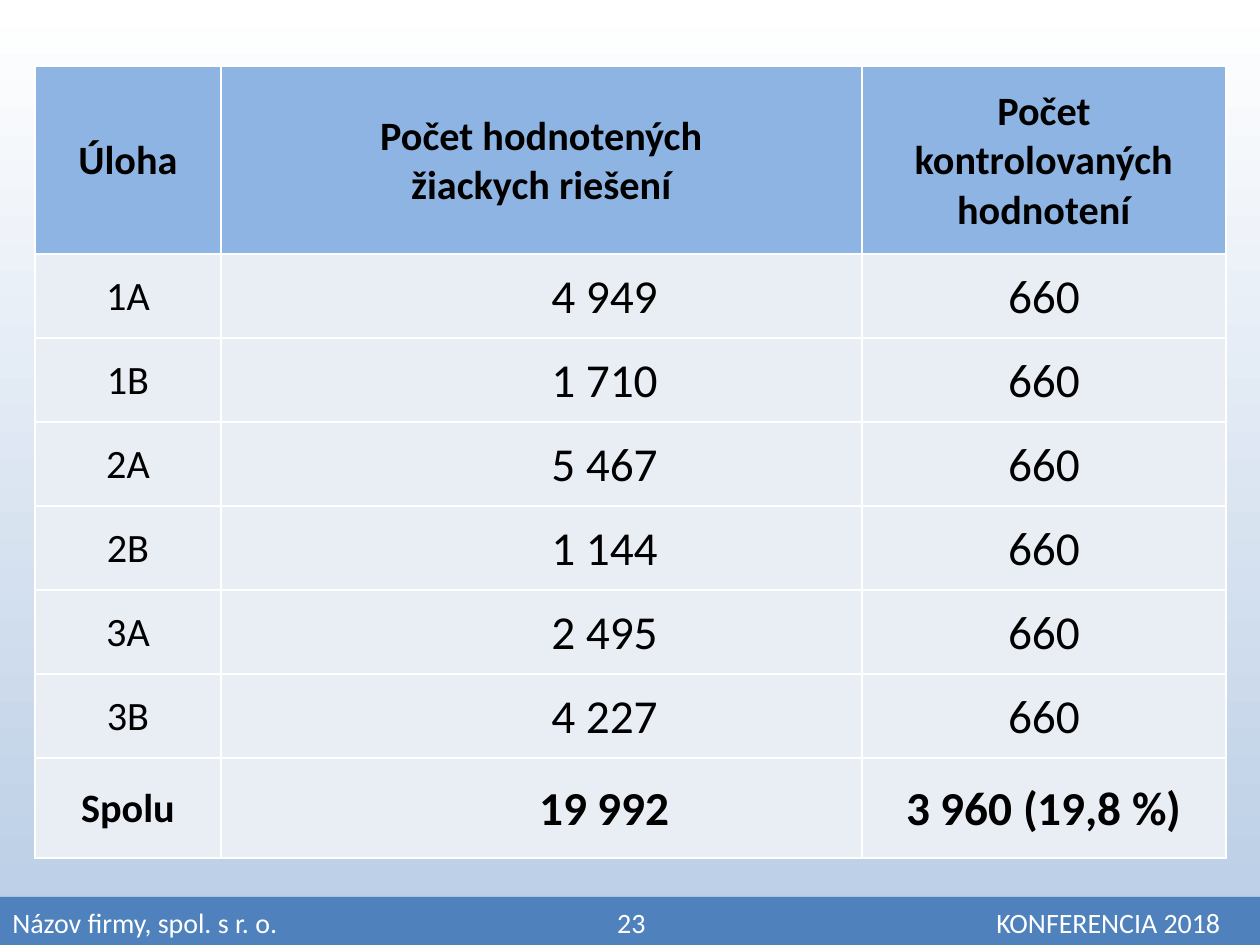
from dataclasses import dataclass

from lxml import etree
from pptx import Presentation
from pptx.dml.color import RGBColor
from pptx.enum.shapes import MSO_SHAPE
from pptx.enum.text import MSO_ANCHOR, PP_ALIGN
from pptx.oxml.ns import qn
from pptx.util import Emu, Pt

RECTANGLE = MSO_SHAPE.RECTANGLE
MIDDLE, BOTTOM = MSO_ANCHOR.MIDDLE, MSO_ANCHOR.BOTTOM
LEFT, CENTER = PP_ALIGN.LEFT, PP_ALIGN.CENTER

WHITE = RGBColor(0xFF, 0xFF, 0xFF)
BLACK = RGBColor(0x00, 0x00, 0x00)
PALE_BLUE = RGBColor(0xB9, 0xCD, 0xE5)
HEADER_BLUE = RGBColor(0x8E, 0xB4, 0xE3)
ROW_GREY = RGBColor(0xE9, 0xED, 0xF4)
FOOTER_BLUE = RGBColor(0x4F, 0x81, 0xBD)

FONT = "Calibri"
LABEL_SIZE, NUMBER_SIZE, FOOTER_SIZE = 23, 27, 16
PX_PER_INCH = 126
PAGE_WIDTH, PAGE_HEIGHT = 1260, 945
TABLE_LEFT, TABLE_TOP = 35, 66
COLUMN_WIDTHS = (186, 641, 364)
HEADER_HEIGHT, TASK_HEIGHT, TOTAL_HEIGHT = 188, 84, 100
SOLUTION_INDENT = 126
FOOTER_TOP = 897
FOOTER_TABS = {"ctr": 619, "r": 1208}


@dataclass(frozen=True)
class TableRow:
    texts: tuple[str, str, str]
    height: int = TASK_HEIGHT
    fill: RGBColor = ROW_GREY
    bold: bool = False
    header: bool = False


TASKS = {"1A": "4 949", "1B": "1 710", "2A": "5 467",
         "2B": "1 144", "3A": "2 495", "3B": "4 227"}
ROWS = [
    TableRow(("Úloha", "Počet hodnotených\nžiackych riešení",
              "Počet kontrolovaných hodnotení"),
             HEADER_HEIGHT, HEADER_BLUE, bold=True, header=True),
    *(TableRow((task, solutions, "660")) for task, solutions in TASKS.items()),
    TableRow(("Spolu", "19 992", "3 960 (19,8 %)"), TOTAL_HEIGHT, bold=True),
]
FOOTER_TEXT = "Názov firmy, spol. s r. o.\t23\tKONFERENCIA 2018"


def px(length: int) -> Emu:
    return Emu(round(length * 914400 / PX_PER_INCH))


def add_span(para, text: str, size: int, color: RGBColor, bold: bool = False) -> None:
    span = para.add_run()
    span.text = text
    span.font.name = FONT
    span.font.size = Pt(size)
    span.font.bold = bold
    span.font.color.rgb = color


def add_borders(cell) -> None:
    """Put a thin white line on each side, ahead of the fill as the schema asks."""
    properties = cell._tc.get_or_add_tcPr()
    for position, side in enumerate(("lnL", "lnR", "lnT", "lnB")):
        line = etree.Element(qn(f"a:{side}"), w=str(Pt(1)))
        fill = etree.SubElement(line, qn("a:solidFill"))
        etree.SubElement(fill, qn("a:srgbClr"), val=str(WHITE))
        properties.insert(position, line)


def fill_cell(cell, row: TableRow, column: int) -> None:
    cell.fill.solid()
    cell.fill.fore_color.rgb = row.fill
    add_borders(cell)
    cell.vertical_anchor = MIDDLE
    cell.margin_left = cell.margin_right = cell.margin_top = px(2)
    cell.margin_bottom = 0
    para = cell.text_frame.paragraphs[0]
    para.alignment = CENTER
    if column == 1 and not row.header:
        para.level = 2
        para._p.get_or_add_pPr().set("marL", str(px(SOLUTION_INDENT)))
    size = LABEL_SIZE if row.header or column == 0 else NUMBER_SIZE
    for number, line in enumerate(row.texts[column].split("\n")):
        if number:
            para.add_line_break()
        add_span(para, line, size, BLACK, row.bold)


def add_results_table(page) -> None:
    frame = page.shapes.add_table(
        len(ROWS), len(COLUMN_WIDTHS), px(TABLE_LEFT), px(TABLE_TOP),
        px(sum(COLUMN_WIDTHS)), px(sum(row.height for row in ROWS)))
    table = frame.table
    for column, width in enumerate(COLUMN_WIDTHS):
        table.columns[column].width = px(width)
    for index, row in enumerate(ROWS):
        table.rows[index].height = px(row.height)
        for column in range(len(COLUMN_WIDTHS)):
            fill_cell(table.cell(index, column), row, column)


def add_footer(page) -> None:
    bar = page.shapes.add_shape(RECTANGLE, 0, px(FOOTER_TOP), px(PAGE_WIDTH),
                                px(PAGE_HEIGHT - FOOTER_TOP))
    bar.shadow.inherit = False
    bar.fill.solid()
    bar.fill.fore_color.rgb = FOOTER_BLUE
    bar.line.fill.background()
    bar.text_frame.word_wrap = True
    bar.text_frame.vertical_anchor = BOTTOM
    para = bar.text_frame.paragraphs[0]
    para.alignment = LEFT
    tabs = etree.SubElement(para._p.get_or_add_pPr(), qn("a:tabLst"))
    for alignment, position in FOOTER_TABS.items():
        etree.SubElement(tabs, qn("a:tab"), pos=str(px(position)), algn=alignment)
    add_span(para, FOOTER_TEXT, FOOTER_SIZE, WHITE)


def paint_background(page) -> None:
    fill = page.background.fill
    fill.gradient()
    fill.gradient_angle = 270
    for stop, position, color in zip(fill.gradient_stops, (0, 1), (WHITE, PALE_BLUE)):
        stop.position = position
        stop.color.rgb = color


def main() -> None:
    deck = Presentation()
    deck.slide_width, deck.slide_height = px(PAGE_WIDTH), px(PAGE_HEIGHT)
    page = deck.slides.add_slide(deck.slide_layouts[6])
    paint_background(page)
    add_results_table(page)
    add_footer(page)
    deck.save("out.pptx")


if __name__ == "__main__":
    main()
